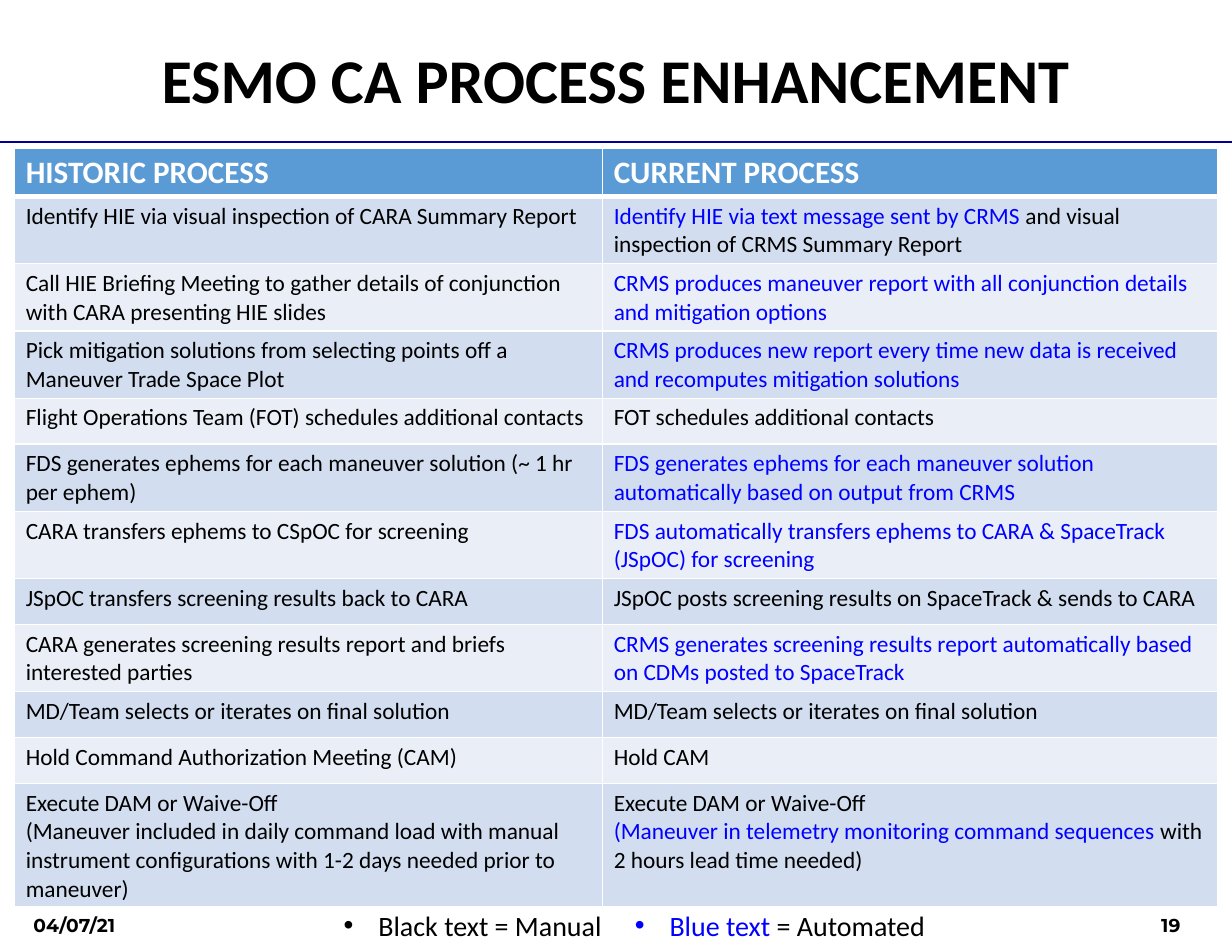
from lxml.etree import SubElement
from pptx import Presentation
from pptx.dml.color import RGBColor
from pptx.enum.shapes import MSO_CONNECTOR as Connector
from pptx.enum.text import MSO_AUTO_SIZE as AutoSize, PP_ALIGN as Align
from pptx.oxml.ns import qn
from pptx.util import Inches, Pt

BLACK = RGBColor(0, 0, 0)
WHITE = RGBColor(255, 255, 255)
BLUE = RGBColor(0, 0, 255)
NAVY = RGBColor(0, 0, 153)
HEADER_FILL = RGBColor(0x5B, 0x9B, 0xD5)
BAND_FILLS = [RGBColor(0xD2, 0xDE, 0xEF), RGBColor(0xEA, 0xEF, 0xF7)]

TITLE = {"name": "Calibri", "size": Pt(40), "bold": True}
FOOTER = {"name": "Montserrat", "size": Pt(12), "bold": True}
LEGEND = {"name": "Calibri", "size": Pt(18), "bold": False}
HEADER = {"name": "Calibri", "size": Pt(20), "bold": True}
BODY = {"name": "Calibri", "size": Pt(15), "bold": False}


def black(text):
    return [(text, BLACK)]


def blue(text):
    return [(text, BLUE)]


PROCESS_STEPS = [
    ([black("Identify HIE via visual inspection of CARA Summary Report")],
     [blue("Identify HIE via text message sent by CRMS ")
      + black("and visual inspection of CRMS Summary Report")]),
    ([black("Call HIE Briefing Meeting to gather details of conjunction with CARA presenting HIE slides")],
     [blue("CRMS produces maneuver report with all conjunction details and mitigation options")]),
    ([black("Pick mitigation solutions from selecting points off a Maneuver Trade Space Plot")],
     [blue("CRMS produces new report every time new data is received and recomputes mitigation solutions")]),
    ([black("Flight Operations Team (FOT) schedules additional contacts")],
     [black("FOT schedules additional contacts")]),
    ([black("FDS generates ephems for each maneuver solution (~ 1 hr per ephem)")],
     [blue("FDS generates ephems for each maneuver solution automatically based on output from CRMS")]),
    ([black("CARA transfers ephems to CSpOC for screening")],
     [blue("FDS automatically transfers ephems to CARA & SpaceTrack"),
      blue("(JSpOC) for screening")]),
    ([black("JSpOC transfers screening results back to CARA")],
     [black("JSpOC posts screening results on SpaceTrack & sends to CARA")]),
    ([black("CARA generates screening results report and briefs interested parties")],
     [blue("CRMS generates screening results report automatically based on CDMs posted to SpaceTrack")]),
    ([black("MD/Team selects or iterates on final solution")],
     [black("MD/Team selects or iterates on final solution")]),
    ([black("Hold Command Authorization Meeting (CAM)")],
     [black("Hold CAM")]),
    ([black("Execute DAM or Waive-Off"),
      black("(Maneuver included in daily command load with manual instrument "
            "configurations with 1-2 days needed prior to maneuver)")],
     [black("Execute DAM or Waive-Off"),
      blue("(Maneuver in telemetry monitoring command sequences ")
      + black("with 2 hours lead time needed)")]),
]


class SlideBuilder:
    def __init__(self, slide):
        self.slide = slide

    def fill_text(self, frame, paragraphs, style, align=Align.LEFT, indent=0, bullet=None):
        for index, runs in enumerate(paragraphs):
            paragraph = frame.paragraphs[0] if index == 0 else frame.add_paragraph()
            paragraph.alignment = align
            properties = paragraph._p.get_or_add_pPr()
            if indent:
                properties.set("marL", str(Inches(indent)))
            if bullet:
                properties.set("indent", str(-Inches(indent)))
                SubElement(properties, qn("a:buFont"), typeface="Arial")
                SubElement(properties, qn("a:buChar"), char=bullet)
            for text, color in runs:
                run = paragraph.add_run()
                run.text = text
                for name, value in style.items():
                    setattr(run.font, name, value)
                run.font.color.rgb = color

    def text(self, left, top, width, height, runs, style, wrap=True, **layout):
        box = self.slide.shapes.add_textbox(
            Inches(left), Inches(top), Inches(width), Inches(height))
        frame = box.text_frame
        frame.word_wrap = wrap
        frame.auto_size = AutoSize.SHAPE_TO_FIT_TEXT
        self.fill_text(frame, [runs], style, **layout)

    def rule(self, left, top, right, color, weight):
        line = self.slide.shapes.add_connector(
            Connector.STRAIGHT, Inches(left), Inches(top), Inches(right), Inches(top))
        line.line.color.rgb = color
        line.line.width = Pt(weight)
        SubElement(line._element.spPr, qn("a:effectLst"))

    def borders(self, cell, **weights):
        properties = cell._tc.get_or_add_tcPr()
        for index, side in enumerate("LRTB"):
            line = SubElement(properties, qn(f"a:ln{side}"), w=str(Pt(weights.get(side, 1))))
            fill = SubElement(line, qn("a:solidFill"))
            SubElement(fill, qn("a:srgbClr"), val=str(WHITE))
            properties.insert(index, line)

    def table(self, left, top, column_widths, row_height, headings, rows):
        shape = self.slide.shapes.add_table(
            len(rows) + 1, len(headings), Inches(left), Inches(top),
            Inches(sum(column_widths)), Inches(row_height * (len(rows) + 1)))
        table = shape.table
        for column, width in zip(table.columns, column_widths):
            column.width = Inches(width)
        header = [[[(heading, WHITE)]] for heading in headings]
        for row_index, row in enumerate([header, *rows]):
            table.rows[row_index].height = Inches(row_height)
            is_header = row_index == 0
            for column_index, paragraphs in enumerate(row):
                cell = table.cell(row_index, column_index)
                cell.fill.solid()
                cell.fill.fore_color.rgb = (
                    HEADER_FILL if is_header else BAND_FILLS[(row_index - 1) % 2])
                self.fill_text(cell.text_frame, paragraphs, HEADER if is_header else BODY)
                self.borders(cell, T=3 if row_index == 1 else 1, B=3 if is_header else 1)


def main():
    presentation = Presentation()
    presentation.slide_width = Inches(11)
    presentation.slide_height = Inches(8.5)
    builder = SlideBuilder(presentation.slides.add_slide(presentation.slide_layouts[6]))

    builder.rule(0, 1.27, 11, NAVY, 1.5)
    builder.text(9.51, 8.11, 1.39, 0.3, black("19"), FOOTER, indent=0.76)
    builder.text(0.2, 8.11, 0.97, 0.3, black("04/07/21"), FOOTER, wrap=False)
    builder.text(0.49, 0.32, 10.01, 0.77, black("ESMO CA PROCESS ENHANCEMENT"),
                 TITLE, align=Align.CENTER)
    builder.table(0.13, 1.32, [5.25, 5.49], 0.41,
                  ["HISTORIC PROCESS", "CURRENT PROCESS"], PROCESS_STEPS)
    builder.text(2.97, 8.06, 2.89, 0.4, black("Black text = Manual"),
                 LEGEND, indent=0.31, bullet="•")
    builder.text(5.57, 8.06, 3.13, 0.4, blue("Blue text ") + black("= Automated"),
                 LEGEND, indent=0.31, bullet="•")
    presentation.save("out.pptx")


if __name__ == "__main__":
    main()
